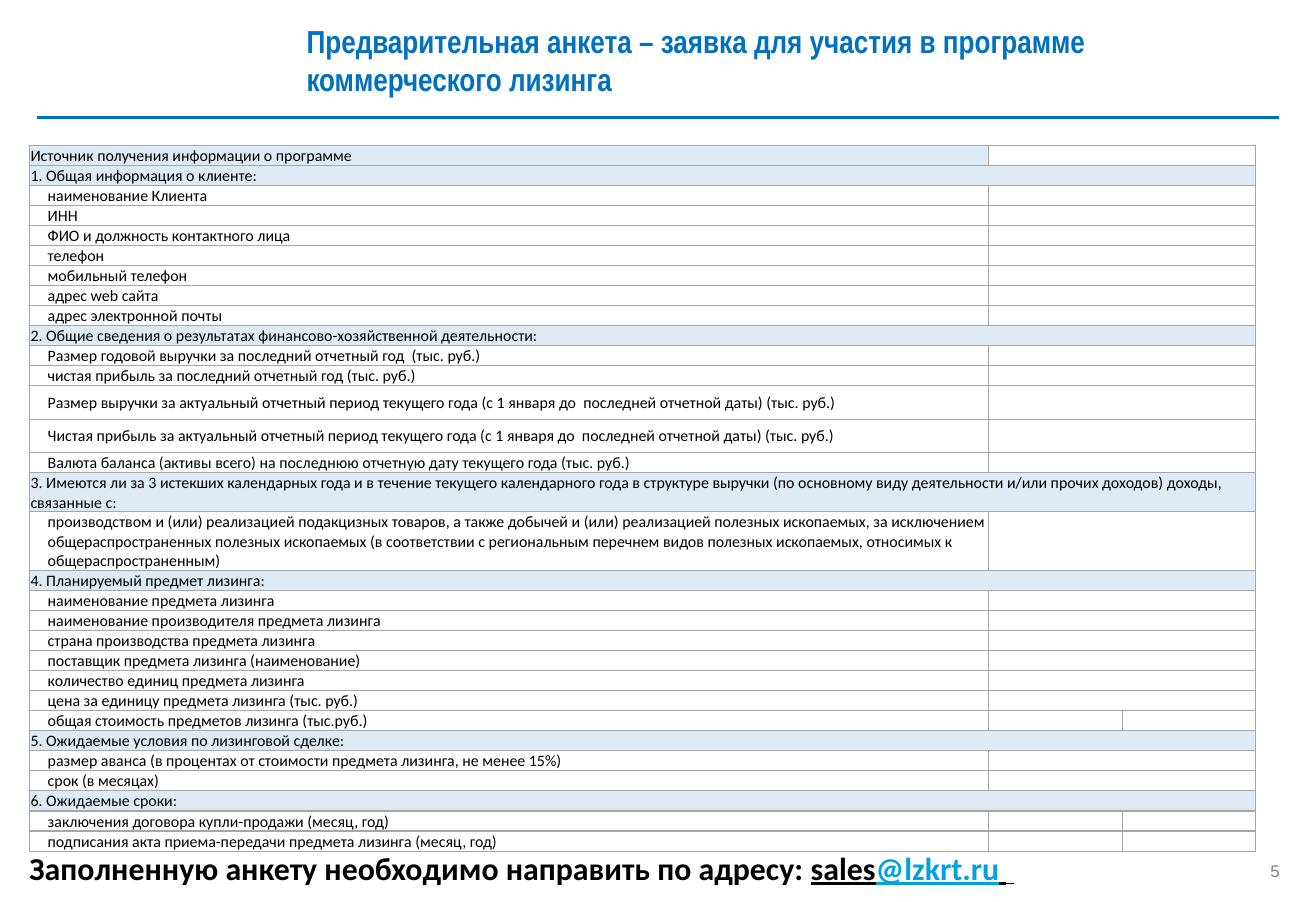
"""Build the preliminary leasing application form slide."""
import lxml.etree
import pptx
import pptx.dml.color
import pptx.enum.shapes
import pptx.enum.text
import pptx.oxml.ns
import pptx.util

Inches = pptx.util.Inches
Pt = pptx.util.Pt
RGBColor = pptx.dml.color.RGBColor
ALIGN = pptx.enum.text.PP_ALIGN
ANCHOR = pptx.enum.text.MSO_ANCHOR
qn = pptx.oxml.ns.qn

BLUE = RGBColor(0x00, 0x70, 0xC0)
LINK = RGBColor(0x00, 0xA1, 0xDE)
BLACK = RGBColor(0x00, 0x00, 0x00)
GREY = RGBColor(0x80, 0x80, 0x80)
BORDER = RGBColor(0xA6, 0xA6, 0xA6)
SECTION_FILL = RGBColor(0xDD, 0xEB, 0xF7)

SOURCE = "Источник получения информации о программе"
SECTIONS = {
    "1. Общая информация о клиенте:": [
        "наименование Клиента",
        "ИНН",
        "ФИО и должность контактного лица",
        "телефон",
        "мобильный телефон",
        "адрес web сайта",
        "адрес электронной почты",
    ],
    "2. Общие сведения о результатах финансово-хозяйственной деятельности:": [
        "Размер годовой выручки за последний отчетный год  (тыс. руб.)",
        "чистая прибыль за последний отчетный год (тыс. руб.)",
        "Размер выручки за актуальный отчетный период текущего года "
        "(с 1 января до  последней отчетной даты) (тыс. руб.)",
        "Чистая прибыль за актуальный отчетный период текущего года "
        "(с 1 января до  последней отчетной даты) (тыс. руб.)",
        "Валюта баланса (активы всего) на последнюю отчетную дату текущего года (тыс. руб.)",
    ],
    "3. Имеются ли за 3 истекших календарных года и в течение текущего календарного года "
    "в структуре выручки (по основному виду деятельности и/или прочих доходов) доходы, "
    "связанные с:": [
        "производством и (или) реализацией подакцизных товаров, а также добычей и (или) "
        "реализацией полезных ископаемых, за исключением общераспространенных полезных "
        "ископаемых (в соответствии с региональным перечнем видов полезных ископаемых, "
        "относимых к общераспространенным)",
    ],
    "4. Планируемый предмет лизинга:": [
        "наименование предмета лизинга",
        "наименование производителя предмета лизинга",
        "страна производства предмета лизинга",
        "поставщик предмета лизинга (наименование)",
        "количество единиц предмета лизинга",
        "цена за единицу предмета лизинга (тыс. руб.)",
        "общая стоимость предметов лизинга (тыс.руб.)",
    ],
    "5. Ожидаемые условия по лизинговой сделке:": [
        "размер аванса (в процентах от стоимости предмета лизинга, не менее 15%)",
        "срок (в месяцах)",
    ],
    "6. Ожидаемые сроки:": [
        "заключения договора купли-продажи (месяц, год)",
        "подписания акта приема-передачи предмета лизинга (месяц, год)",
    ],
}
ROW_HEIGHT = 0.21
TALL_ROWS = {12: 0.35, 13: 0.35, 15: 0.41, 16: 0.61}
SPLIT_ROWS = {24, 29, 30}
COLUMN_WIDTHS = [10.04, 1.4, 1.4]


def apply(target, values):
    for attribute, value in values.items():
        setattr(target, attribute, value)


def add_run(paragraph, text, color, **values):
    run = paragraph.add_run()
    run.text = text
    apply(run.font, values)
    run.font.color.rgb = color


deck = pptx.Presentation()
apply(deck, {"slide_width": Inches(13.78), "slide_height": Inches(9.45)})
slide = deck.slides.add_slide(deck.slide_layouts[5])

heading = slide.shapes.title
apply(heading, {"left": Inches(3.11), "top": Inches(0.25),
                "width": Inches(10.29), "height": Inches(0.76)})
apply(heading.text_frame, {"vertical_anchor": ANCHOR.MIDDLE, "word_wrap": True,
                           "auto_size": pptx.enum.text.MSO_AUTO_SIZE.NONE})
heading_line = heading.text_frame.paragraphs[0]
heading_line.alignment = ALIGN.LEFT
add_run(heading_line,
        "Предварительная анкета – заявка для участия в программе коммерческого лизинга",
        BLUE, size=Pt(24), name="Arial Narrow", bold=True)

divider = slide.shapes.add_connector(pptx.enum.shapes.MSO_CONNECTOR.STRAIGHT,
                                     Inches(0.39), Inches(1.23), Inches(13.39), Inches(1.23))
divider.line.color.rgb = BLUE
divider.line.width = Pt(2.25)
lxml.etree.SubElement(divider._element.spPr, qn("a:effectLst"))

page_number = slide.shapes.add_textbox(Inches(12.98), Inches(9.03), Inches(0.42), Inches(0.2))
apply(page_number.text_frame, {"margin_left": 0, "margin_top": 0, "margin_right": 0,
                               "margin_bottom": 0, "word_wrap": True})
page_line = page_number.text_frame.paragraphs[0]
apply(page_line, {"alignment": ALIGN.RIGHT, "line_spacing": Pt(14.3)})
add_run(page_line, "5", GREY, size=Pt(12.7), name="Arial")

labels = [SOURCE]
for section, questions in SECTIONS.items():
    labels += [section, *questions]
heights = [TALL_ROWS.get(index, ROW_HEIGHT) for index in range(len(labels))]

form = slide.shapes.add_table(len(labels), len(COLUMN_WIDTHS), Inches(0.31), Inches(1.52),
                              Inches(sum(COLUMN_WIDTHS)), Inches(sum(heights))).table
apply(form, {"first_row": False, "horz_banding": False})
for column, width in zip(form.columns, COLUMN_WIDTHS):
    column.width = Inches(width)

for index, (label, height) in enumerate(zip(labels, heights)):
    form.rows[index].height = Inches(height)
    is_section = label in SECTIONS
    is_shaded = is_section or label == SOURCE
    for position in range(len(COLUMN_WIDTHS)):
        cell = form.cell(index, position)
        indent = 0.01 if position or is_shaded else 0.19
        apply(cell, {"vertical_anchor": ANCHOR.MIDDLE, "margin_left": Inches(indent),
                     "margin_top": Inches(0.01), "margin_right": Inches(0.01),
                     "margin_bottom": 0})
        if is_section or (is_shaded and position == 0):
            cell.fill.solid()
            cell.fill.fore_color.rgb = SECTION_FILL
        else:
            cell.fill.background()
        cell_properties = cell._tc.get_or_add_tcPr()
        for order, side in enumerate(["lnL", "lnR", "lnT", "lnB"]):
            edge = lxml.etree.Element(qn(f"a:{side}"), w=str(Pt(1)))
            edge_fill = lxml.etree.SubElement(edge, qn("a:solidFill"))
            lxml.etree.SubElement(edge_fill, qn("a:srgbClr"), val=str(BORDER))
            cell_properties.insert(order, edge)
        entry = cell.text_frame.paragraphs[0]
        if position == 0:
            entry.alignment = ALIGN.JUSTIFY if label == SOURCE else ALIGN.LEFT
            add_run(entry, label, BLACK, size=Pt(12), name="Calibri")
        else:
            lxml.etree.SubElement(entry._p, qn("a:endParaRPr"), sz="1200")
    if is_section:
        form.cell(index, 0).merge(form.cell(index, 2))
    elif index not in SPLIT_ROWS:
        form.cell(index, 1).merge(form.cell(index, 2))

address = slide.shapes.add_textbox(Inches(0.21), Inches(8.84), Inches(13.36), Inches(0.5))
address.text_frame.word_wrap = True
address_line = address.text_frame.paragraphs[0]
bold_text = {"size": Pt(24), "name": "Calibri", "bold": True}
add_run(address_line, "Заполненную анкету необходимо направить по адресу: ", BLACK, **bold_text)
for part, color in [("sales", BLACK), ("@lzkrt.ru", LINK), (" ", BLACK)]:
    add_run(address_line, part, color, underline=True, **bold_text)
add_run(address_line, " ", BLACK, size=Pt(21.2), name="Arial", underline=True)

deck.save("out.pptx")
